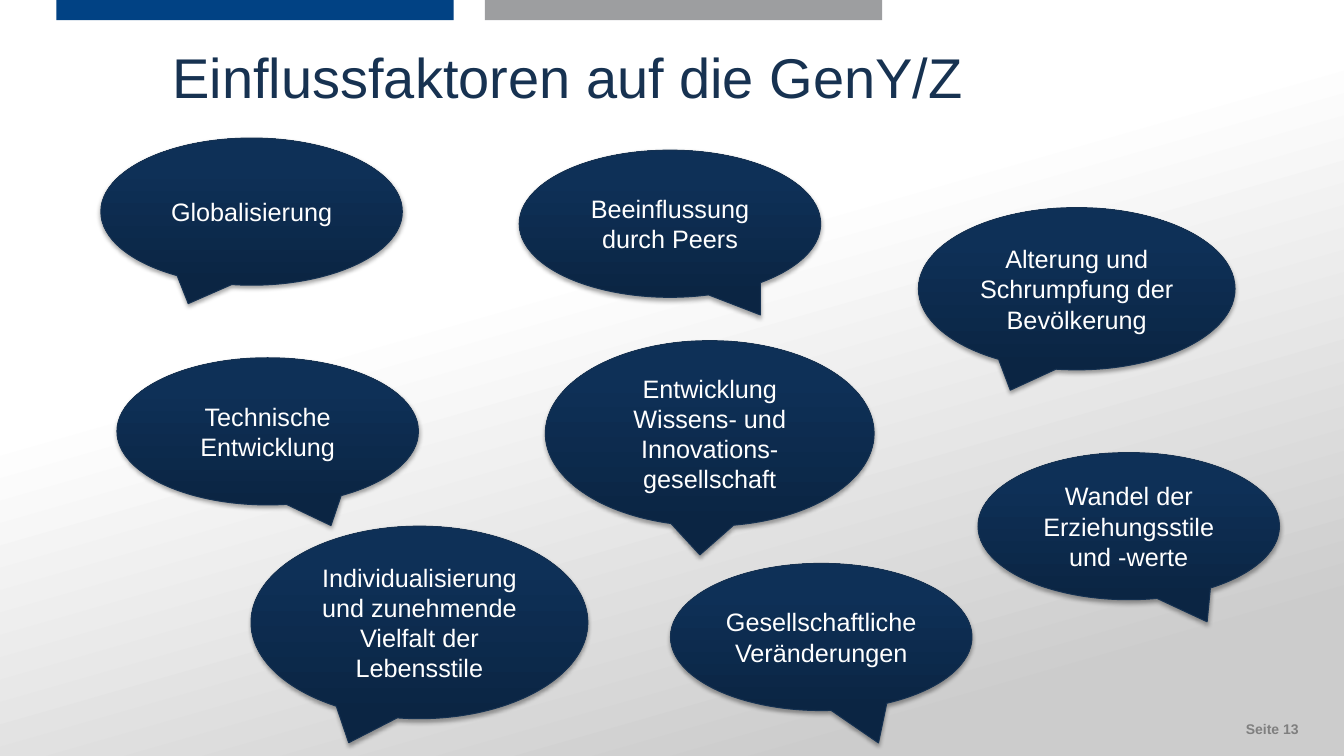
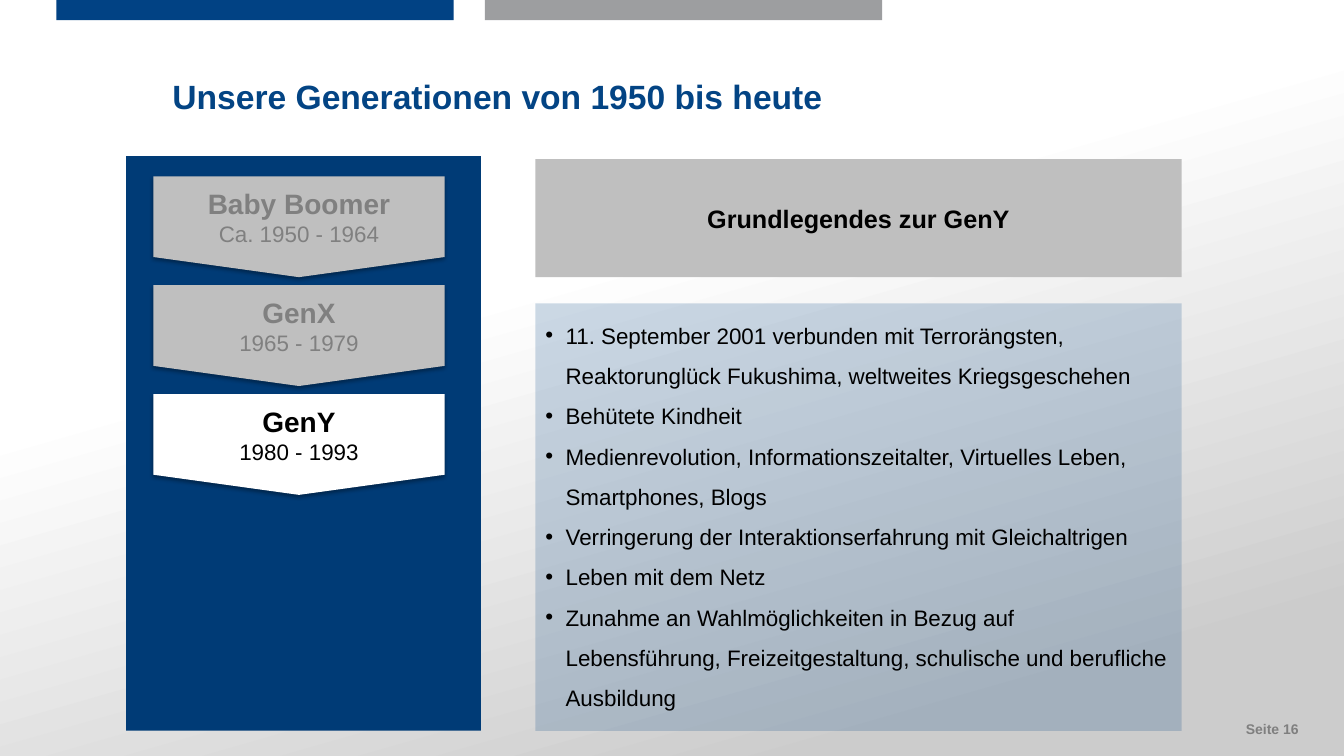
"""Build two slides about the influences on and the basics of generation Y."""
from dataclasses import dataclass
from typing import Optional

from lxml.etree import SubElement
from pptx import Presentation
from pptx.dml.color import RGBColor
from pptx.dml.fill import FillFormat
from pptx.enum.shapes import MSO_SHAPE as Preset
from pptx.enum.text import MSO_ANCHOR as Anchor, MSO_AUTO_SIZE as AutoSize, PP_ALIGN as Align
from pptx.oxml.ns import qn
from pptx.shapes.autoshape import Shape
from pptx.slide import Slide
from pptx.text.text import TextFrame
from pptx.util import Inches, Pt

FONT = "Arial"
COLORS = {
    "white": "FFFFFF",
    "black": "000000",
    "backdrop": "CCCCCC",
    "band_blue": "014284",
    "band_gray": "9D9EA0",
    "footer": "7F7F7F",
    "title_dark": "173251",
    "title_blue": "034484",
    "bubble_bottom": "0B2543",
    "bubble_top": "0E3057",
    "bubble_line": "153151",
    "column": "003B76",
    "inactive": "BFBFBF",
    "inactive_text": "808080",
}
TITLE_ONLY, TITLE_AND_BODY = 5, 1


@dataclass(frozen=True)
class Area:
    left: float
    top: float
    width: float
    height: float

    def lengths(self) -> tuple[Inches, Inches, Inches, Inches]:
        return Inches(self.left), Inches(self.top), Inches(self.width), Inches(self.height)


@dataclass(frozen=True)
class Bubble:
    text: str
    left: float
    top: float
    width: float = 2.99
    height: float = 1.46
    tip: tuple[float, float] = (-0.21, 0.625)


@dataclass(frozen=True)
class Generation:
    name: str
    years: str
    active: bool = False


BUBBLES = (
    Bubble("Individualisierung und zunehmende Vielfalt der Lebensstile", 2.49, 5.22, 3.34, 1.91),
    Bubble("Technische Entwicklung", 1.16, 3.55, tip=(0.21, 0.64)),
    Bubble("Globalisierung", 1, 1.37),
    Bubble("Gesellschaftliche Veränderungen", 6.65, 5.59, tip=(0.19, 0.72)),
    Bubble("Entwicklung Wissens- und Innovations-gesellschaft", 5.41, 3.38, 3.26, 1.84,
           tip=(-0.03, 0.655)),
    Bubble("Beeinflussung durch Peers", 5.15, 1.49, tip=(0.3, 0.62)),
    Bubble("Wandel der Erziehungsstile und -werte", 9.7, 4.49, tip=(0.26, 0.65)),
    Bubble("Alterung und Schrumpfung der Bevölkerung", 9.11, 2.06, 3.14, 1.61),
)
GENERATIONS = (
    Generation("Baby Boomer", "Ca. 1950 - 1964"),
    Generation("GenX", "1965 - 1979"),
    Generation("GenY", "1980 - 1993", active=True),
)
FACTS = (
    "11. September 2001 verbunden mit Terrorängsten, Reaktorunglück Fukushima, "
    "weltweites Kriegsgeschehen",
    "Behütete Kindheit",
    "Medienrevolution, Informationszeitalter, Virtuelles Leben, Smartphones, Blogs",
    "Verringerung der Interaktionserfahrung mit Gleichaltrigen",
    "Leben mit dem Netz",
    "Zunahme an Wahlmöglichkeiten in Bezug auf Lebensführung, Freizeitgestaltung, "
    "schulische und berufliche Ausbildung",
)


def rgb(name: str) -> RGBColor:
    return RGBColor.from_string(COLORS[name])


def paint_gradient(fill: FillFormat, start: tuple[float, str], end: tuple[float, str],
                   angle: float) -> None:
    fill.gradient()
    fill.gradient_angle = angle
    for stop, (position, color) in zip(fill.gradient_stops, (start, end)):
        stop.position = position
        stop.color.rgb = rgb(color)


def write(frame: TextFrame, text: str, *, size: float, color: str, bold: bool = False,
          align: Align = Align.CENTER, spacing: float = 1.0, indent: float = 0) -> None:
    first = frame.paragraphs[0]
    para = frame.add_paragraph() if first.runs else first
    para.alignment = align
    para.line_spacing = spacing
    para.space_before = Pt(0)
    if indent:
        properties = para._p.get_or_add_pPr()
        properties.set("marL", str(Inches(indent)))
        properties.set("indent", str(-Inches(indent)))
    span = para.add_run()
    span.text = text
    span.font.name = FONT
    span.font.size = Pt(size)
    span.font.bold = bold
    span.font.color.rgb = rgb(color)


def set_frame(frame: TextFrame, anchor: Anchor) -> None:
    frame.word_wrap = True
    frame.auto_size = AutoSize.NONE
    frame.vertical_anchor = anchor


def place(shape: Shape, area: Area) -> None:
    shape.left, shape.top, shape.width, shape.height = area.lengths()


def add_box(page: Slide, area: Area, *, preset: Preset = Preset.RECTANGLE,
            color: Optional[str] = None, shadow: bool = False) -> Shape:
    box = page.shapes.add_shape(preset, *area.lengths())
    box.shadow.inherit = False
    box.line.fill.background()
    if color:
        box.fill.solid()
        box.fill.fore_color.rgb = rgb(color)
    if shadow:
        effects = box.element.spPr.find(qn("a:effectLst"))
        outer = SubElement(effects, qn("a:outerShdw"), blurRad=str(Pt(3.1)),
                           dist=str(Pt(1.8)), dir="5400000", rotWithShape="0")
        tint = SubElement(outer, qn("a:srgbClr"), val=COLORS["black"])
        SubElement(tint, qn("a:alpha"), val="35000")
    set_frame(box.text_frame, Anchor.MIDDLE)
    return box


def add_page(deck: Presentation, layout: int, number: int, title: str, *, top: float,
             size: float, color: str, bold: bool = False, spacing: float = 1.0) -> Slide:
    page = deck.slides.add_slide(deck.slide_layouts[layout])
    paint_gradient(page.background.fill, (0.38, "white"), (0.87, "backdrop"), 286)
    for left, band in ((4.81, "band_gray"), (0.56, "band_blue")):
        add_box(page, Area(left, 0, 3.94, 0.2), color=band)

    footer = page.shapes.add_textbox(*Area(11.44, 7.15, 1.44, 0.27).lengths()).text_frame
    set_frame(footer, Anchor.TOP)
    footer.margin_left = footer.margin_right = footer.margin_top = footer.margin_bottom = 0
    write(footer, f"Seite {number}", size=10, color="footer", bold=True, align=Align.RIGHT)

    heading = page.shapes.title
    place(heading, Area(1.61, top, 9, 0.8))
    set_frame(heading.text_frame, Anchor.TOP)
    write(heading.text_frame, title, size=size, color=color, bold=bold, align=Align.LEFT,
          spacing=spacing)
    return page


def add_bubble(page: Slide, bubble: Bubble) -> None:
    area = Area(bubble.left, bubble.top, bubble.width, bubble.height)
    box = add_box(page, area, preset=Preset.OVAL_CALLOUT, shadow=True)
    box.adjustments[0], box.adjustments[1] = bubble.tip
    paint_gradient(box.fill, (0, "bubble_bottom"), (0.8, "bubble_top"), 90)
    box.line.color.rgb = rgb("bubble_line")
    box.line.width = Pt(0.75)
    write(box.text_frame, bubble.text, size=18, color="white")


def add_generation(page: Slide, generation: Generation, top: float) -> None:
    fill, ink = ("white", "black") if generation.active else ("inactive", "inactive_text")
    box = add_box(page, Area(1.52, top, 2.89, 1), preset=Preset.FLOWCHART_OFFPAGE_CONNECTOR,
                  color=fill, shadow=True)
    write(box.text_frame, generation.name, size=20, color=ink, bold=True)
    write(box.text_frame, generation.years, size=16, color=ink)


def add_facts(page: Slide, area: Area) -> None:
    body = page.placeholders[1]
    place(body, area)
    body.fill.solid()
    body.fill.fore_color.rgb = rgb("title_blue")
    tint = body.element.spPr.find(qn("a:solidFill")).find(qn("a:srgbClr"))
    SubElement(tint, qn("a:alpha"), val="20000")
    set_frame(body.text_frame, Anchor.TOP)
    for fact in FACTS:
        write(body.text_frame, fact, size=16, color="black", align=Align.LEFT, spacing=1.5,
              indent=0.2)


def build_influences(deck: Presentation) -> None:
    page = add_page(deck, TITLE_ONLY, 13, "Einflussfaktoren auf die GenY/Z", top=0.37, size=40,
                    color="title_dark")
    for bubble in BUBBLES:
        add_bubble(page, bubble)


def build_generations(deck: Presentation) -> None:
    page = add_page(deck, TITLE_AND_BODY, 16, "Unsere Generationen von 1950 bis heute", top=0.5,
                    size=24, color="title_blue", bold=True, spacing=1.5)
    add_box(page, Area(1.25, 1.55, 3.52, 5.7), color="column")
    for index, generation in enumerate(GENERATIONS):
        add_generation(page, generation, 1.75 + 1.08 * index)
    header = add_box(page, Area(5.31, 1.58, 6.41, 1.17), color="inactive")
    write(header.text_frame, "Grundlegendes zur GenY", size=18, color="black", bold=True)
    add_facts(page, Area(5.31, 3.01, 6.41, 4.24))


def main() -> None:
    deck = Presentation()
    deck.slide_width, deck.slide_height = Inches(13.33), Inches(7.5)
    build_influences(deck)
    build_generations(deck)
    deck.save("out.pptx")


if __name__ == "__main__":
    main()
